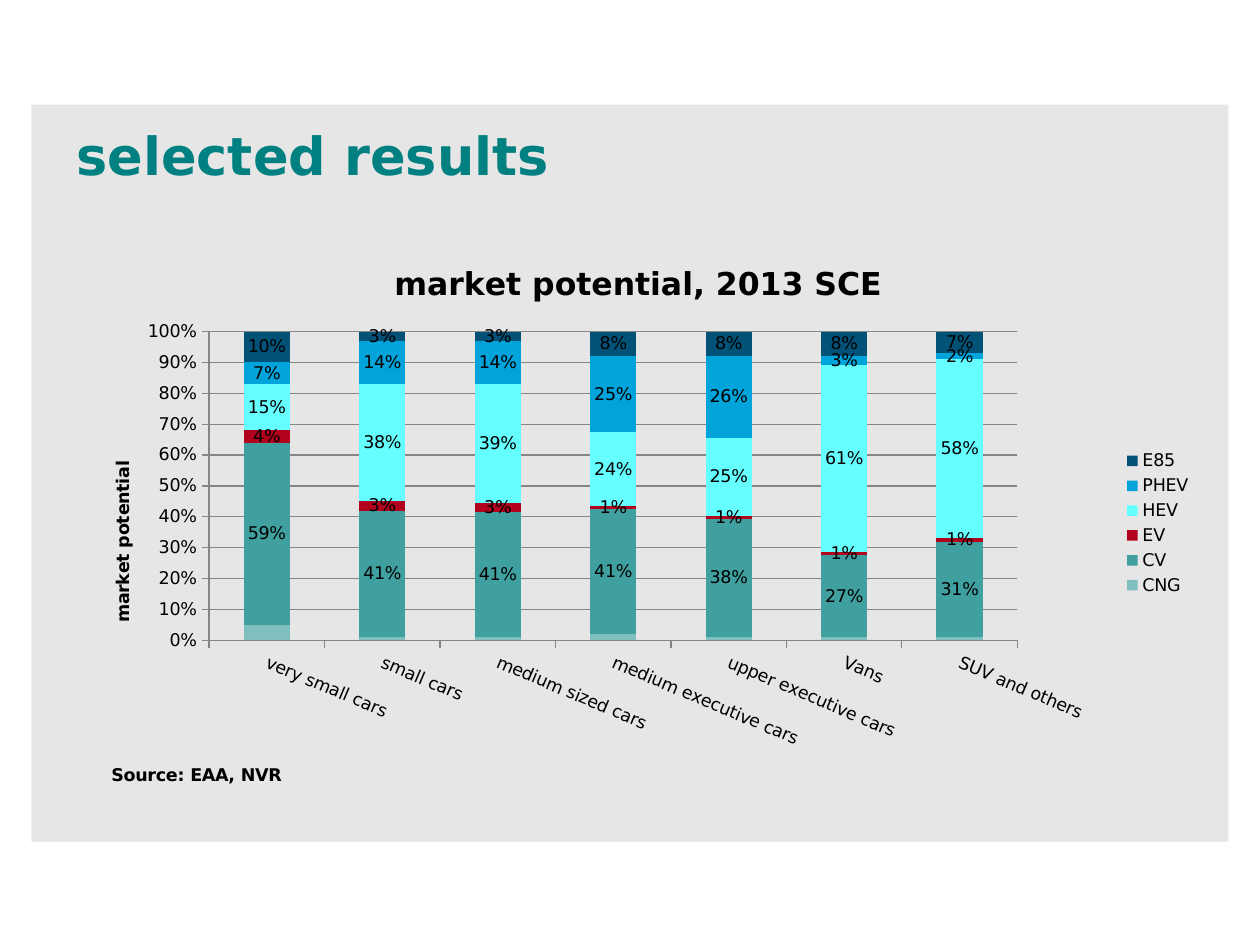
from lxml.etree import SubElement
from pptx import Presentation
from pptx.chart.data import CategoryChartData
from pptx.dml.color import RGBColor
from pptx.enum.chart import XL_CHART_TYPE, XL_LEGEND_POSITION, XL_TICK_MARK
from pptx.enum.shapes import MSO_SHAPE
from pptx.enum.text import MSO_ANCHOR
from pptx.oxml.ns import qn
from pptx.util import Inches, Pt

FONT = "DejaVu Sans"
CATEGORIES = ["very small cars", "small cars", "medium sized cars", "medium executive cars",
              "upper executive cars", "Vans", "SUV and others"]
SERIES = [
    ("CNG", "7FBFBF", [0.05, 0.01, 0.01, 0.02, 0.01, 0.01, 0.01]),
    ("CV", "40A0A0", [0.59, 0.41, 0.41, 0.41, 0.38, 0.27, 0.31]),
    ("EV", "B2011D", [0.04, 0.03, 0.03, 0.01, 0.01, 0.01, 0.01]),
    ("HEV", "66FFFF", [0.15, 0.38, 0.39, 0.24, 0.25, 0.61, 0.58]),
    ("PHEV", "00A3DA", [0.07, 0.14, 0.14, 0.25, 0.26, 0.03, 0.02]),
    ("E85", "025277", [0.1, 0.03, 0.03, 0.08, 0.08, 0.08, 0.07]),
]


def color(value):
    """Turn a hex string into a colour."""
    return RGBColor.from_string(value)


def style_font(font, size, value, bold=False):
    """Set the typeface, size, colour and weight of a font."""
    font.name = FONT
    font.size = Pt(size)
    font.bold = bold
    font.color.rgb = color(value)


def set_layout(element, index, x, y, w=None, h=None, inner=False):
    """Give a chart part a manual place, in fractions of the chart."""
    for old in element.findall(qn("c:layout")):
        element.remove(old)
    layout = SubElement(element, qn("c:layout"))
    element.insert(index, layout)
    manual = SubElement(layout, qn("c:manualLayout"))
    settings = [("layoutTarget", "inner")] if inner else []
    settings += [("xMode", "edge"), ("yMode", "edge"), ("x", x), ("y", y)]
    settings += [(name, value) for name, value in (("w", w), ("h", h)) if value is not None]
    for name, value in settings:
        SubElement(manual, qn(f"c:{name}")).set("val", str(value))


def set_title(title, text, size, x, y):
    """Write and place a chart or axis title."""
    para = title.text_frame.paragraphs[0]
    para.text = text
    style_font(para.runs[0].font, size, "000000", True)
    set_layout(title._element, 1, x, y)


def add_panel(page, left, top, width, height):
    """Draw the grey background panel."""
    panel = page.shapes.add_shape(MSO_SHAPE.RECTANGLE, left, top, width, height)
    panel.shadow.inherit = False
    panel.fill.solid()
    panel.fill.fore_color.rgb = color("E6E6E6")
    panel.line.fill.background()


def add_heading(page, left, top, width, height):
    """Write the slide heading."""
    box = page.shapes.add_textbox(left, top, width, height)
    frame = box.text_frame
    frame.word_wrap = True
    frame.vertical_anchor = MSO_ANCHOR.MIDDLE
    frame.text = "selected results"
    style_font(frame.paragraphs[0].runs[0].font, 30, "008080", True)


def style_axes(chart):
    """Format both axes, their titles and the gridlines."""
    category, value = chart.category_axis, chart.value_axis
    for axis in (category, value):
        axis.major_tick_mark = XL_TICK_MARK.OUTSIDE
        axis.format.line.color.rgb = color("868686")
        style_font(axis.tick_labels.font, 10, "000000")
    category._element.txPr.bodyPr.set("rot", "1380000")
    value.minimum_scale, value.maximum_scale, value.major_unit = 0, 1, 0.1
    value.tick_labels.number_format = "0%"
    value.tick_labels.number_format_is_linked = False
    value.has_major_gridlines = True
    value.major_gridlines.format.line.color.rgb = color("868686")
    set_title(category.axis_title, "Source: EAA, NVR", 10, 0.03, 0.92)
    set_title(value.axis_title, "market potential ", 10, 0.03, 0.38)


def style_series(plot):
    """Colour the series and label all but the lowest one."""
    plot.gap_width = 150
    plot.overlap = 100
    plot.vary_by_categories = False
    for series, (name, fill, _) in zip(plot.series, SERIES):
        series.format.fill.solid()
        series.format.fill.fore_color.rgb = color(fill)
        if name != "CNG":
            labels = series.data_labels
            labels.show_value = True
            labels.number_format = "0%"
            labels.number_format_is_linked = False
            style_font(labels.font, 10, "000000")


def add_market_chart(page, left, top, width, height):
    """Add the stacked chart of market potential by car class."""
    data = CategoryChartData(number_format="0%")
    data.categories = CATEGORIES
    for name, _, values in SERIES:
        data.add_series(name, values)
    chart = page.shapes.add_chart(XL_CHART_TYPE.COLUMN_STACKED_100, left, top, width, height, data).chart
    style_font(chart.font, 10, "000000")
    set_title(chart.chart_title, "market potential, 2013 SCE", 18, 0.28, 0.04)
    style_axes(chart)
    style_series(chart.plots[0])
    chart.has_legend = True
    chart.legend.position = XL_LEGEND_POSITION.RIGHT
    chart.legend.include_in_layout = False
    style_font(chart.legend.font, 10, "000000")
    set_layout(chart.legend._element, 1, 0.93, 0.37, 0.07, 0.27)
    plot_area = chart._chartSpace.chart.plotArea
    set_layout(plot_area, 0, 0.12, 0.17, 0.72, 0.54, inner=True)


def main():
    """Build and save the slide."""
    deck = Presentation()
    deck.slide_width, deck.slide_height = Inches(10), Inches(7.5)
    page = deck.slides.add_slide(deck.slide_layouts[6])
    add_panel(page, Inches(0.25), Inches(0.83), Inches(9.5), Inches(5.85))
    add_heading(page, Inches(0.51), Inches(0.6), Inches(9), Inches(1.25))
    add_market_chart(page, Inches(0.59), Inches(1.86), Inches(8.91), Inches(4.54))
    deck.save("out.pptx")


if __name__ == "__main__":
    main()
